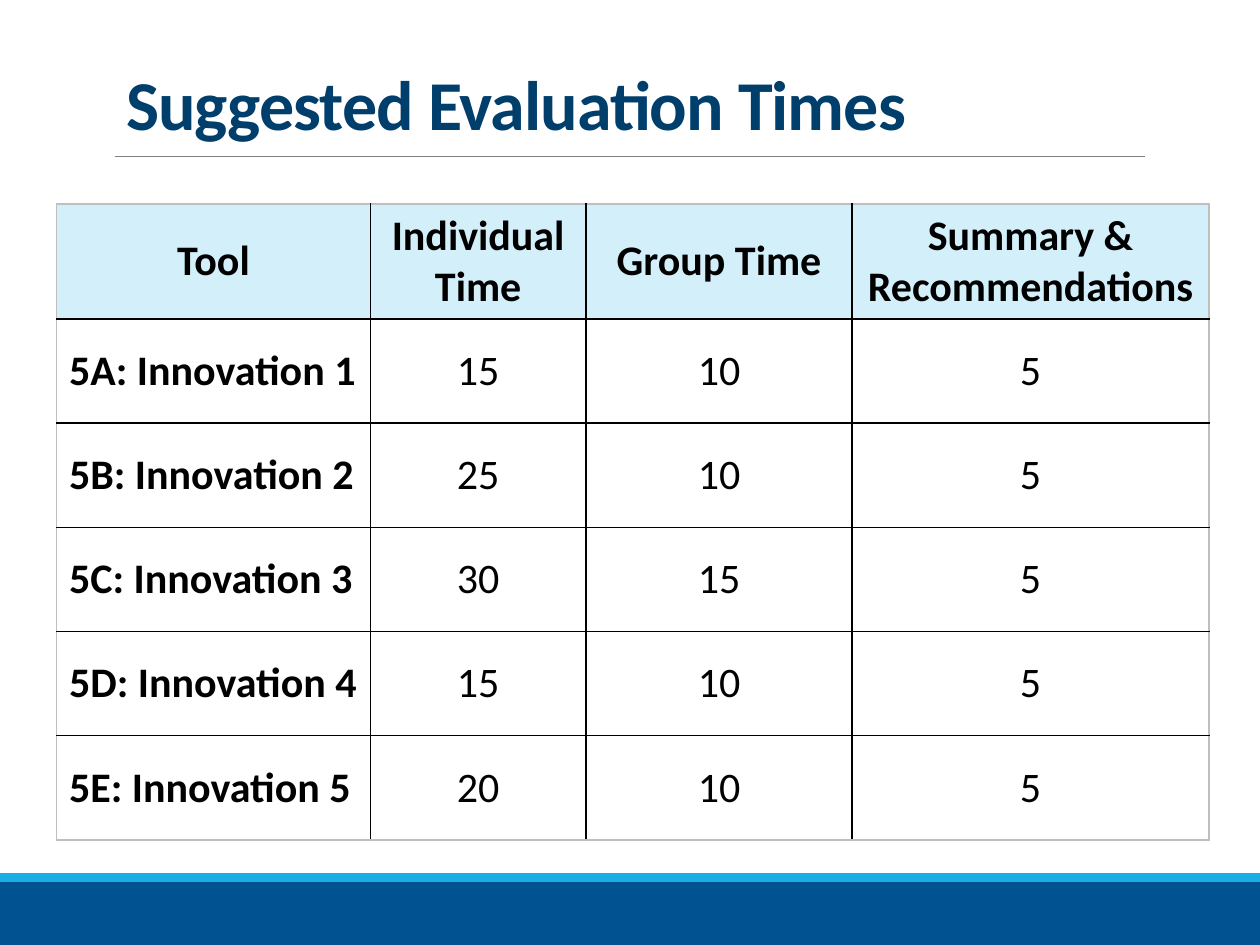
"""Build the slide of suggested evaluation times."""
from lxml import etree
from pptx import Presentation
from pptx import util as u
from pptx.dml.color import RGBColor
from pptx.enum import shapes, text
from pptx.oxml import ns

NAVY = RGBColor(0x00, 0x3E, 0x6C)
BLUE = RGBColor(0x00, 0x53, 0x90)
SKY = RGBColor(0x1C, 0xAD, 0xE4)
PALE = RGBColor(0xD2, 0xEF, 0xFA)
GRAY = RGBColor(0x80, 0x80, 0x80)
EDGE = RGBColor(0xBF, 0xBF, 0xBF)
BLACK = RGBColor(0, 0, 0)

ROWS = [
    ("Tool", "Individual Time", "Group Time", "Summary & Recommendations"),
    ("5A: Innovation 1", "15", "10", "5"),
    ("5B: Innovation 2", "25", "10", "5"),
    ("5C: Innovation 3", "30", "15", "5"),
    ("5D: Innovation 4", "15", "10", "5"),
    ("5E: Innovation 5", "20", "10", "5"),
]
WIDTHS = [6.33, 4.34, 5.37, 7.19]
HEIGHTS = [2.31] + [2.1] * 5


class Deck:
    def __init__(self, face):
        self.face = face
        self.prs = Presentation()
        self.prs.slide_width, self.prs.slide_height = u.Cm(25.4), u.Cm(19.05)
        self.slide = self.prs.slides.add_slide(self.prs.slide_layouts[5])

    def style(self, para, size, color, bold):
        font = para.font
        font.name, font.size, font.bold = self.face, u.Pt(size), bold
        font.color.rgb = color

    def title(self, words, x, y, w, h):
        box = self.slide.shapes.title
        box.left, box.top, box.width, box.height = map(u.Cm, (x, y, w, h))
        frame = box.text_frame
        frame.text = words
        frame.auto_size = text.MSO_AUTO_SIZE.NONE
        frame.vertical_anchor = text.MSO_ANCHOR.BOTTOM
        para = frame.paragraphs[0]
        para.alignment = text.PP_ALIGN.LEFT
        para.line_spacing = 0.85
        self.style(para, 40, NAVY, True)
        para.runs[0].font._element.set("spc", "-50")

    def bar(self, x, y, w, h, color):
        bar = self.slide.shapes.add_shape(
            shapes.MSO_SHAPE.RECTANGLE, *map(u.Cm, (x, y, w, h)))
        bar.shadow.inherit = False
        bar.fill.solid()
        bar.fill.fore_color.rgb = color
        bar.line.fill.background()

    def rule(self, x, y, end, color):
        line = self.slide.shapes.add_connector(
            shapes.MSO_CONNECTOR.STRAIGHT, *map(u.Cm, (x, y, end, y)))
        line.line.color.rgb = color
        line.line.width = u.Pt(0.5)
        etree.SubElement(line._element.spPr, ns.qn("a:effectLst"))

    def border(self, cell, side, color):
        line = etree.SubElement(
            cell._tc.get_or_add_tcPr(), ns.qn(f"a:ln{side}"), w=str(u.Pt(1)))
        fill = etree.SubElement(line, ns.qn("a:solidFill"))
        etree.SubElement(fill, ns.qn("a:srgbClr"), val=str(color))

    def cell(self, cell, words, head, first, outer):
        for side, edge in outer.items():
            self.border(cell, side, EDGE if edge else BLACK)
        if head:
            cell.fill.solid()
            cell.fill.fore_color.rgb = PALE
        else:
            cell.fill.background()
        cell.text = words
        cell.vertical_anchor = text.MSO_ANCHOR.MIDDLE
        para = cell.text_frame.paragraphs[0]
        left = first and not head
        para.alignment = text.PP_ALIGN.LEFT if left else text.PP_ALIGN.CENTER
        self.style(para, 24, BLACK, head or first)

    def table(self, rows, x, y, widths, heights):
        grid = self.slide.shapes.add_table(
            len(rows), len(widths),
            *map(u.Cm, (x, y, sum(widths), sum(heights)))).table
        grid.first_row = grid.horz_banding = False
        for col, width in zip(grid.columns, widths):
            col.width = u.Cm(width)
        for r, (row, height) in enumerate(zip(rows, heights)):
            grid.rows[r].height = u.Cm(height)
            for c, words in enumerate(row):
                outer = {"L": c == 0, "R": c == len(widths) - 1,
                         "T": r == 0, "B": r == len(rows) - 1}
                self.cell(grid.cell(r, c), words, r == 0, c == 0, outer)


def main():
    deck = Deck("Calibri")
    deck.bar(0, 17.78, 25.4, 1.27, BLUE)
    deck.bar(0, 17.6, 25.4, 0.18, SKY)
    deck.rule(2.31, 3.15, 23.09, GRAY)
    deck.title("Suggested Evaluation Times", 2.29, 0.79, 20.96, 2.26)
    deck.table(ROWS, 1.14, 4.11, WIDTHS, HEIGHTS)
    deck.prs.save("out.pptx")


if __name__ == "__main__":
    main()
